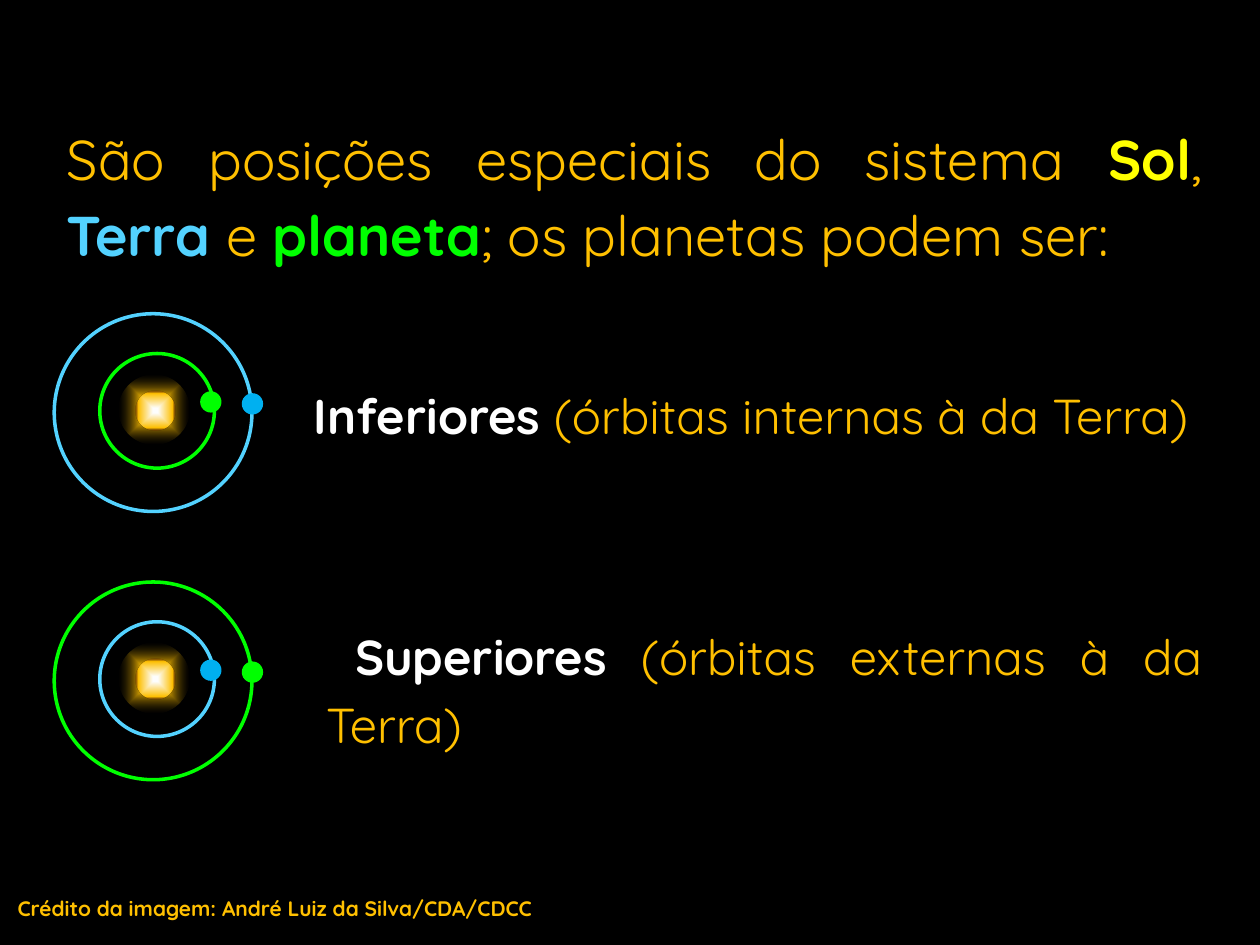
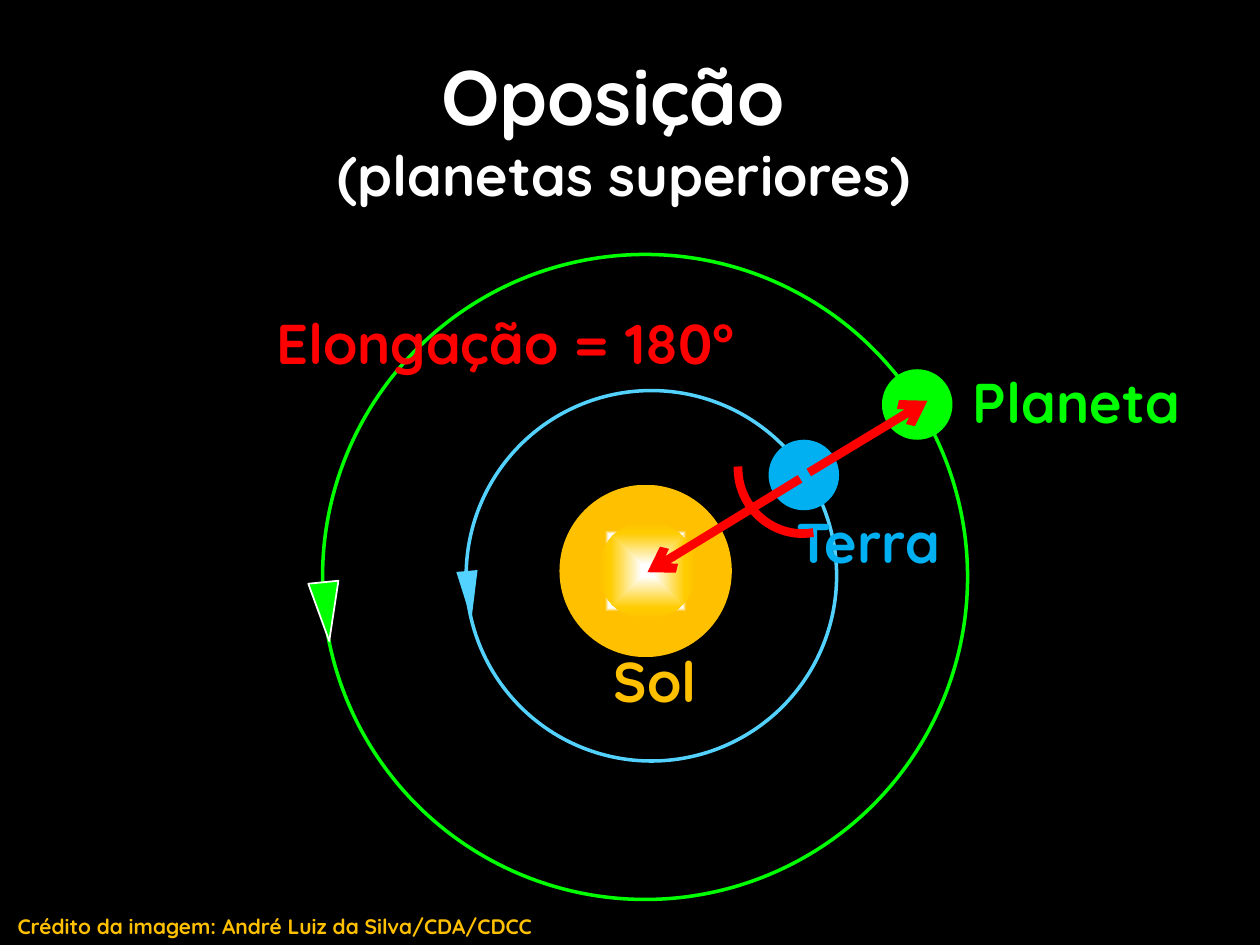
import pptx
import pptx.dml.color
import pptx.enum.shapes
import pptx.enum.text
import pptx.oxml
import pptx.oxml.ns
import pptx.util
from lxml import etree

Pt = pptx.util.Pt
SHAPE = pptx.enum.shapes.MSO_SHAPE
ALIGN = pptx.enum.text.PP_ALIGN
ANCHOR = pptx.enum.text.MSO_ANCHOR
qn = pptx.oxml.ns.qn

COLORS = {
    "space": "000000", "text": "FFC000", "white": "FFFFFF", "sun": "FFFF00",
    "earth": "00B0F0", "earth orbit": "53D2FF", "planet": "00FF00",
    "angle": "FF0000", "gold": "FFCC00", "ember": "4D0808",
}
FONT = "Quicksand"
CREDIT = "Crédito da imagem: André Luiz da Silva/CDA/CDCC"

GLOW = [(7, "white", 100), (32, "text", 100), (100, "space", 23)]
CORE = [(12, "white", 100), (85, "text", 100), (100, "ember", 17)]
DISC = [(43, "white", 100), (47, "text", 100), (100, "text", 0)]
DISC_CORE = [(12, "white", 100), (76, "gold", 100), (100, "text", 100)]


def rgb(color):
    return pptx.dml.color.RGBColor.from_string(COLORS[color])


class Sketch:
    def __init__(self):
        self.deck = pptx.Presentation()
        self.deck.slide_width, self.deck.slide_height = Pt(720), Pt(540)
        self.page = None

    def add_page(self, layout, credit_top):
        self.page = self.deck.slides.add_slide(self.deck.slide_layouts[layout])
        self.page.background.fill.solid()
        self.page.background.fill.fore_color.rgb = rgb("space")
        self.text(3, credit_top, 380, 21.5, [(CREDIT, "text", True)], 12)

    def add_spans(self, para, spans, size, align):
        para.alignment = align
        para.font.name, para.font.size = FONT, Pt(size)
        for words, color, bold in spans:
            span = para.add_run()
            span.text = words
            span.font.bold = bold
            span.font.color.rgb = rgb(color)

    def text(self, left, top, width, height, spans, size,
             align=ALIGN.LEFT, spacing=1.0, indent=0):
        box = self.page.shapes.add_textbox(Pt(left), Pt(top), Pt(width), Pt(height))
        box.text_frame.word_wrap = True
        para = box.text_frame.paragraphs[0]
        para.line_spacing = spacing
        self.add_spans(para, spans, size, align)
        if indent:
            para._p.get_or_add_pPr().set("indent", str(Pt(indent)))

    def label(self, left, top, width, words, color):
        self.text(left, top, width, 46, [(words, color, True)], 32, ALIGN.CENTER)

    def title(self, left, top, width, height, main, detail):
        box = self.page.shapes.title
        box.left, box.top, box.width, box.height = map(Pt, (left, top, width, height))
        frame = box.text_frame
        frame.auto_size = pptx.enum.text.MSO_AUTO_SIZE.NONE
        frame.vertical_anchor = ANCHOR.MIDDLE
        para = frame.paragraphs[0]
        self.add_spans(para, [(main, "white", True)], 44, ALIGN.CENTER)
        para.add_line_break()
        self.add_spans(para, [(detail, "white", True)], 44, ALIGN.CENTER)
        para.runs[-1].font.size = Pt(32)

    def shape(self, kind, left, top, width, height, fill=None, line=None,
              weight=2, turn=0):
        shape = self.page.shapes.add_shape(kind, Pt(left), Pt(top), Pt(width), Pt(height))
        shape.shadow.inherit = False
        shape.rotation = turn
        if fill:
            shape.fill.solid()
            shape.fill.fore_color.rgb = rgb(fill)
        else:
            shape.fill.background()
        if line:
            shape.line.color.rgb = rgb(line)
            shape.line.width = Pt(weight)
        else:
            shape.line.fill.background()
        return shape

    def circle(self, left, top, size, fill=None, line=None):
        return self.shape(SHAPE.OVAL, left, top, size, size, fill, line)

    def glow(self, left, top, size, stops):
        shape = self.circle(left, top, size)
        blank = shape._element.spPr.find(qn("a:noFill"))
        gradient = etree.Element(qn("a:gradFill"), rotWithShape="1")
        stop_list = etree.SubElement(gradient, qn("a:gsLst"))
        for position, color, opacity in stops:
            stop = etree.SubElement(stop_list, qn("a:gs"), pos=str(position * 1000))
            tone = etree.SubElement(stop, qn("a:srgbClr"), val=COLORS[color])
            if opacity < 100:
                etree.SubElement(tone, qn("a:alpha"), val=str(opacity * 1000))
        shade = etree.SubElement(gradient, qn("a:path"))
        shade.set("path", "shape")
        etree.SubElement(shade, qn("a:fillToRect"),
                         {side: "50000" for side in "ltrb"})
        blank.getparent().replace(blank, gradient)

    def arrow(self, start, end, color, weight):
        line = self.page.shapes.add_connector(
            pptx.enum.shapes.MSO_CONNECTOR.STRAIGHT, *map(Pt, start + end))
        line.line.color.rgb = rgb(color)
        line.line.width = Pt(weight)
        etree.SubElement(line.line._get_or_add_ln(), qn("a:tailEnd"), type="arrow")
        etree.SubElement(line._element.spPr, qn("a:effectLst"))

    def arc(self, left, top, width, height, angles, turn, color, weight):
        arc = self.shape(SHAPE.ARC, left, top, width, height, None, color, weight, turn)
        for index, angle in enumerate(angles):
            arc.adjustments[index] = angle * 0.6

    def small_system(self, top, inner, outer):
        orbit = {"earth": "earth orbit", "planet": "planet"}
        self.circle(31, top, 113, line=orbit[outer])
        self.circle(57, top + 22.7, 65.5, line=orbit[inner])
        self.circle(114.4, top + 44.3, 12.2, fill=inner)
        self.circle(138.2, top + 45.4, 12.2, fill=outer)
        self.glow(68, top + 34.6, 40.3, GLOW)
        self.glow(77.4, top + 43.9, 23, CORE)


def special_positions(sketch):
    sketch.add_page(6, 508.3)
    sketch.text(31, 62.7, 663, 100, [
        ("São posições especiais do sistema ", "text", False),
        ("Sol", "sun", True), (", ", "text", False),
        ("Terra ", "earth orbit", True), ("e ", "text", False),
        ("planeta", "planet", True),
        ("; os planetas podem ser:", "text", False),
    ], 32, ALIGN.JUSTIFY, 1.13)
    groups = [
        ("Inferiores", " (órbitas internas à da Terra)", 172.3, 211.3, 0),
        ("Superiores", " (órbitas externas à da Terra)", 179.3, 349, 16.5),
    ]
    for name, detail, left, top, indent in groups:
        sketch.text(left, top, 694.1 - left, 85,
                    [(name, "white", True), (detail, "text", False)],
                    28, ALIGN.JUSTIFY, 1.16, indent)
    sketch.small_system(179.3, "planet", "earth")
    sketch.small_system(332.6, "earth", "planet")


def opposition(sketch):
    sketch.add_page(5, 518.4)
    sketch.title(25.2, 15.1, 663, 116, "Oposição ", "(planetas superiores)")
    sketch.glow(319.7, 277, 98.5, DISC)
    sketch.glow(342, 298, 56, DISC_CORE)
    sketch.circle(184.3, 145.4, 368.6, line="planet")
    sketch.circle(266.4, 223.2, 211.7, line="earth orbit")
    sketch.circle(439.2, 251.3, 40.3, fill="earth")
    sketch.circle(504, 211, 40.3, fill="planet")
    sketch.label(337.7, 365.8, 73.4, "Sol", "text")
    sketch.label(445, 286.6, 102.2, "Terra", "earth")
    sketch.label(541.4, 206.6, 147.6, "Planeta", "planet")
    sketch.arrow((457.2, 273.6), (370, 327), "angle", 5)
    sketch.arc(422, 231.8, 71.3, 73.4, (110.05, 214.33), 328.7, "angle", 5)
    sketch.arrow((462.2, 270), (530, 229), "angle", 5)
    sketch.label(139, 172.8, 300.2, "Elongação = 180°", "angle")
    sketch.shape(SHAPE.ISOSCELES_TRIANGLE, 177.8, 332.6, 17.3, 33.8,
                 "planet", "white", 1, 174.3)
    sketch.shape(SHAPE.ISOSCELES_TRIANGLE, 262, 326.2, 12.2, 28,
                 "earth orbit", turn=174.8)


def main():
    sketch = Sketch()
    special_positions(sketch)
    opposition(sketch)
    sketch.deck.save("out.pptx")


if __name__ == "__main__":
    main()
